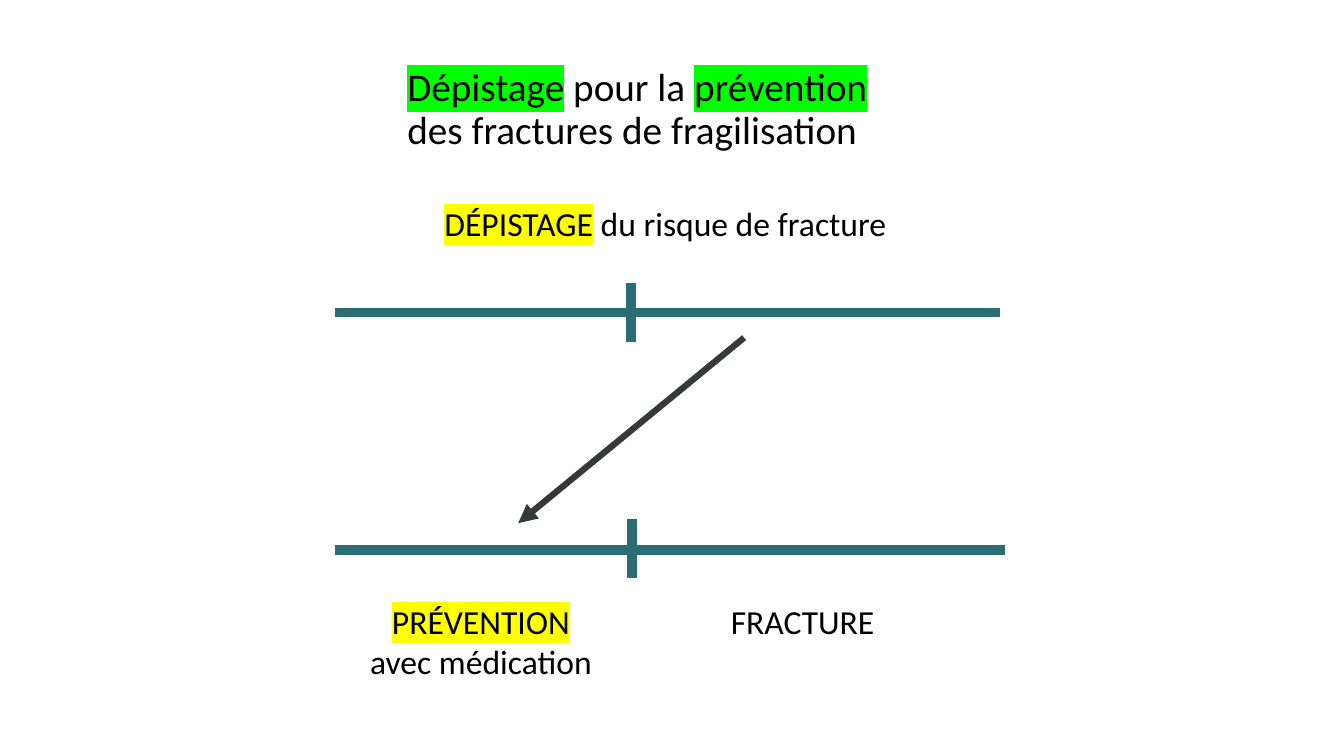
from lxml.etree import SubElement as Sub
from pptx import Presentation
from pptx.dml.color import RGBColor
from pptx.enum.shapes import MSO_CONNECTOR as Link
from pptx.enum.text import MSO_ANCHOR as Anchor, MSO_AUTO_SIZE as Fit, PP_ALIGN as Align
from pptx.oxml.ns import qn
from pptx.util import Inches, Pt

# Content: paragraphs are lists of (words, highlight); "\n" is a line break
GREEN, YELLOW, TEAL, GREY = "00FF00", "FFFF00", "2C6C75", "363839"
TITLE = [[("Dépistage", GREEN), (" pour la ", None), ("prévention", GREEN),
          ("\n", None), ("des fractures de fragilisation", None)]]
LABELS = [
    ((4.31, 1.96, 4.63, 0.5), Align.LEFT,
     [[("DÉPISTAGE", YELLOW), (" du risque de fracture", None)]]),
    ((3.56, 5.91, 2.42, 0.91), Align.CENTER,
     [[("PRÉVENTION", YELLOW)], [("avec médication", None)]]),
    ((7.15, 5.91, 1.64, 0.5), Align.LEFT, [[("FRACTURE", None)]]),
]
# Time lines: left, right, height of the line, then x and middle of its tick
AXES = [(3.32, 9.92, 3.1, 6.26, 3.1), (3.32, 9.97, 5.46, 6.27, 5.44)]
TICK = 0.58
ARROW = (7.38, 3.35, 5.14, 5.19)


def color(code):
    return RGBColor.from_string(code)


def place(shape, box):
    shape.left, shape.top, shape.width, shape.height = map(Inches, box)


def text(shape, paras, size=24, align=Align.LEFT, wrap=False,
         fit=Fit.SHAPE_TO_FIT_TEXT, anchor=Anchor.TOP, space=1.0):
    frame = shape.text_frame
    frame.word_wrap, frame.auto_size, frame.vertical_anchor = wrap, fit, anchor
    for i, parts in enumerate(paras):
        para = frame.add_paragraph() if i else frame.paragraphs[0]
        para.alignment, para.line_spacing = align, space
        for words, mark in parts:
            if words == "\n":
                para.add_line_break()
                continue
            run = para.add_run()
            run.text = words
            run.font.size = Pt(size)
            run.font.color.rgb = color("000000")
            if mark:
                light = Sub(run.font._element, qn("a:highlight"))
                Sub(light, qn("a:srgbClr"), val=mark)
            run.font.name = "Calibri"


def line(ends, code, width, arrow=False):
    link = slide.shapes.add_connector(Link.STRAIGHT, *map(Inches, ends))
    link.line.color.rgb = color(code)
    link.line.width = Pt(width)
    if arrow:
        Sub(link.line._get_or_add_ln(), qn("a:tailEnd"), type="triangle")
    Sub(link._element.spPr, qn("a:effectLst"))


deck = Presentation()
deck.slide_width, deck.slide_height = Inches(13.33), Inches(7.5)
slide = deck.slides.add_slide(deck.slide_layouts[5])

# Title
title = slide.shapes.title
place(title, (3.94, 0.68, 5.76, 0.83))
text(title, TITLE, size=28, wrap=True, fit=Fit.NONE,
     anchor=Anchor.MIDDLE, space=0.9)

# Time lines with ticks, and the arrow between them
for left, right, y, x, mid in AXES:
    line((left, y, right, y), TEAL, 7)
    line((x, mid + TICK / 2, x, mid - TICK / 2), TEAL, 7)
line(ARROW, GREY, 4.5, arrow=True)

# Labels
for box, align, paras in LABELS:
    text(slide.shapes.add_textbox(*map(Inches, box)), paras, align=align)

deck.save("out.pptx")
